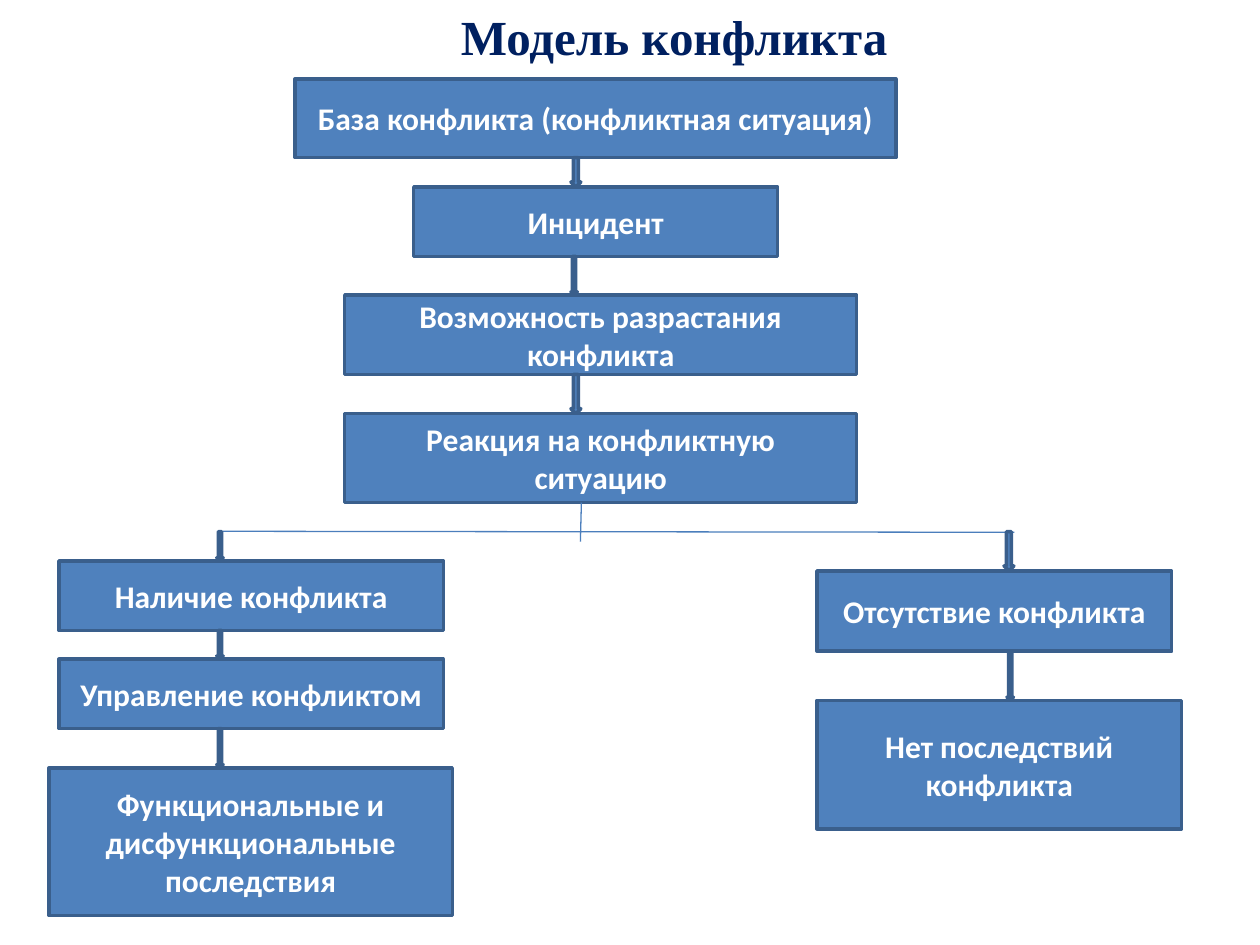
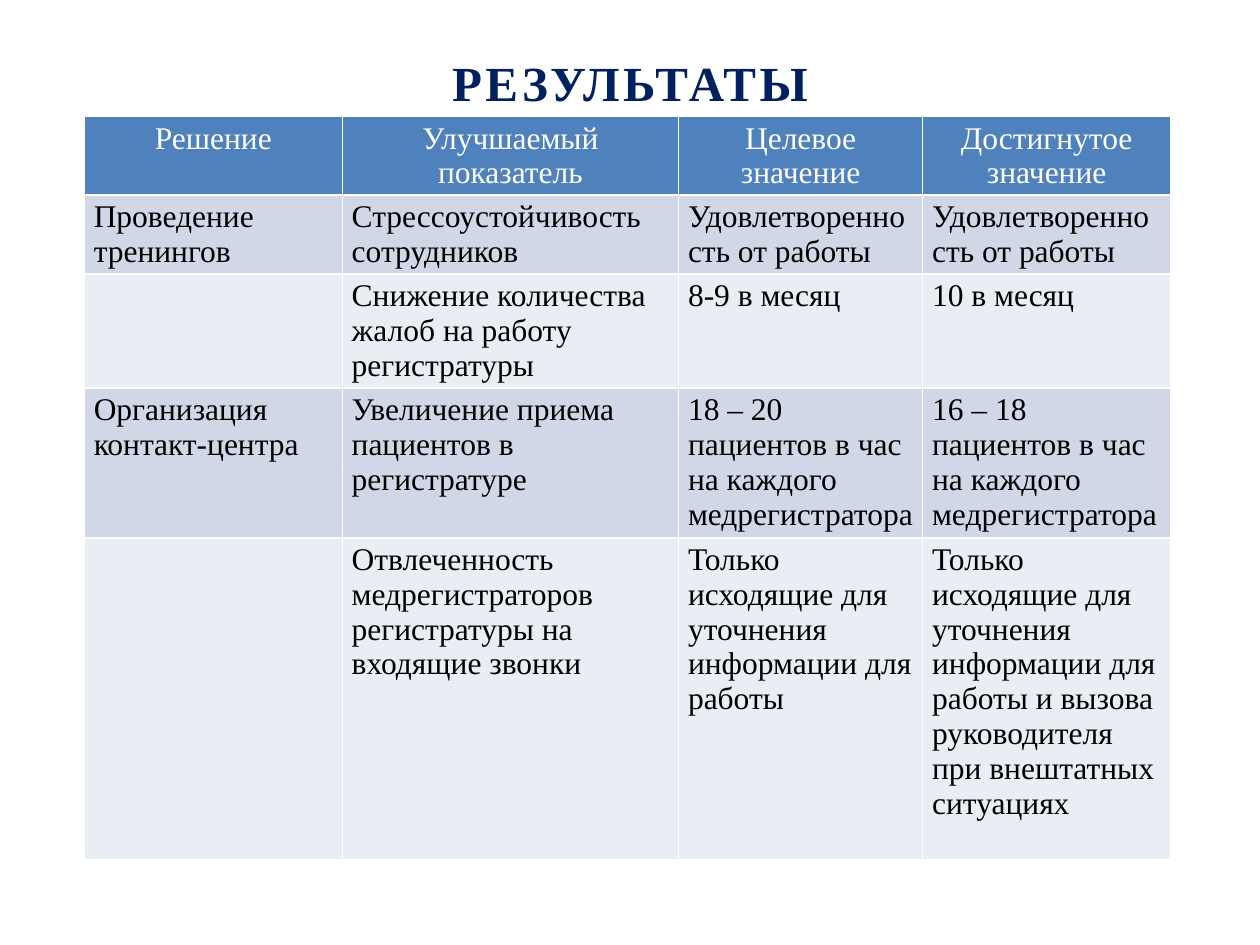
from itertools import pairwise

from lxml.etree import SubElement
from pptx import Presentation
from pptx.dml.color import RGBColor
from pptx.enum.shapes import MSO_CONNECTOR, MSO_SHAPE
from pptx.enum.text import MSO_ANCHOR, PP_ALIGN
from pptx.oxml.ns import qn
from pptx.util import Cm, Pt

NAVY = RGBColor(0x00, 0x20, 0x60)
BLUE = RGBColor(0x4F, 0x81, 0xBD)
OUTLINE = RGBColor(0x3A, 0x5F, 0x8C)
BRANCH = RGBColor(0x4B, 0x7E, 0xBC)
WHITE = RGBColor(0xFF, 0xFF, 0xFF)
BLACK = RGBColor(0x00, 0x00, 0x00)
BANDS = [RGBColor(0xD0, 0xD8, 0xE8), RGBColor(0xE9, 0xED, 0xF4)]

TITLE_FONT = {"name": "Times New Roman", "size": Pt(28), "bold": True}
STEP_FONT = {"name": "Calibri", "size": Pt(18), "bold": True}
CELL_FONT = {"name": "Times New Roman", "size": Pt(18), "bold": False}
CELL_LINE = Pt(19.9)
CELL_MARGINS = {
    "margin_left": Cm(0.19),
    "margin_right": Cm(0.19),
    "margin_top": Cm(0.09),
    "margin_bottom": Cm(0.09),
}

MODEL_TITLE = ("Модель конфликта", (2.16, 0, 22.86, 1.46), 0)
RESULTS_TITLE = ("РЕЗУЛЬТАТЫ", (1.27, 0.78, 22.86, 1.75), 200)

COURSE = [
    ("База конфликта (конфликтная ситуация)", (5.95, 1.59, 12.11, 1.59)),
    ("Инцидент", (8.34, 3.77, 7.34, 1.4)),
    ("Возможность разрастания конфликта", (6.95, 5.95, 10.32, 1.6)),
    ("Реакция на конфликтную ситуацию", (6.95, 8.34, 10.32, 1.79)),
]
CONFLICT = [
    ("Наличие конфликта", (1.19, 11.31, 7.75, 1.4)),
    ("Управление конфликтом", (1.19, 13.29, 7.75, 1.4)),
    ("Функциональные и дисфункциональные последствия", (0.99, 15.48, 8.13, 2.98)),
]
NO_CONFLICT = [
    ("Отсутствие конфликта", (16.47, 11.51, 7.15, 1.62)),
    ("Нет последствий конфликта", (16.47, 14.12, 7.35, 2.59)),
]
THIN, THICK = 0.13, 0.2
FORK_TOP = 10.72
COURSE_ARROWS = [(11.51, THICK), (11.51, THIN), (11.51, THICK)]
CONFLICT_ARROWS = [(4.37, THIN)] * 3
NO_CONFLICT_ARROWS = [(20.24, THICK), (20.3, THIN)]
FORK_LINES = [
    (11.72, 10.13, 11.7, 10.92),
    (4.37, 10.71, 20.45, 10.73),
]

RESULTS = [
    ("Решение", "Улучшаемый показатель", "Целевое значение", "Достигнутое значение"),
    ("Проведение тренингов", "Стрессоустойчивость сотрудников",
     "Удовлетворенность от работы", "Удовлетворенность от работы"),
    ("", "Снижение количества жалоб на работу регистратуры",
     "8-9 в месяц", "10 в месяц"),
    ("Организация контакт-центра", "Увеличение приема пациентов в регистратуре",
     "18 – 20 пациентов в час на каждого медрегистратора",
     "16 – 18 пациентов в час на каждого медрегистратора"),
    ("", "Отвлеченность медрегистраторов регистратуры на входящие звонки",
     "Только исходящие для уточнения информации для работы",
     "Только исходящие для уточнения информации для работы и вызова "
     "руководителя при внештатных ситуациях"),
]
RESULTS_AT = (1.7, 2.35)
COLUMN_WIDTHS = [5.2, 6.78, 4.92, 5.0]
ROW_HEIGHTS = [1.57, 1.59, 2.3, 3.02, 6.49]


def set_values(target, values):
    for attribute, value in values.items():
        setattr(target, attribute, value)


def write(frame, text, font, color, align):
    paragraph = frame.paragraphs[0]
    paragraph.alignment = align
    if text:
        paragraph.add_run().text = text
    for part in (paragraph, *paragraph.runs):
        set_values(part.font, font)
        part.font.color.rgb = color
    return paragraph


def add_title(slide, text, place, spacing):
    frame = slide.shapes.add_textbox(*map(Cm, place)).text_frame
    set_values(frame, {"word_wrap": True, "vertical_anchor": MSO_ANCHOR.MIDDLE})
    paragraph = write(frame, text, TITLE_FONT, NAVY, PP_ALIGN.CENTER)
    if spacing:
        paragraph.runs[0].font._element.set("spc", str(spacing))


def add_block(slide, preset, place):
    block = slide.shapes.add_shape(preset, *map(Cm, place))
    block.shadow.inherit = False
    block.fill.solid()
    block.fill.fore_color.rgb = BLUE
    block.line.color.rgb = OUTLINE
    block.line.width = Pt(2)
    return block


def add_chain(slide, steps, arrows, start=None):
    for text, place in steps:
        frame = add_block(slide, MSO_SHAPE.RECTANGLE, place).text_frame
        set_values(frame, {"word_wrap": True, "vertical_anchor": MSO_ANCHOR.MIDDLE})
        write(frame, text, STEP_FONT, WHITE, PP_ALIGN.CENTER)
    places = [place for _, place in steps]
    gaps = [(upper[1] + upper[3], lower[1]) for upper, lower in pairwise(places)]
    if start is not None:
        gaps.insert(0, (start, places[0][1]))
    for (left, width), (top, bottom) in zip(arrows, gaps):
        add_block(slide, MSO_SHAPE.DOWN_ARROW, (left, top, width, bottom - top))


def add_fork(slide):
    for ends in FORK_LINES:
        branch = slide.shapes.add_connector(MSO_CONNECTOR.STRAIGHT, *map(Cm, ends))
        branch.line.color.rgb = BRANCH
        branch.line.width = Pt(0.75)
        SubElement(branch._element.spPr, qn("a:effectLst"))


def add_borders(cell):
    properties = cell._tc.get_or_add_tcPr()
    for side in "LRTB":
        border = SubElement(properties, qn(f"a:ln{side}"), w=str(Pt(1)))
        fill = SubElement(border, qn("a:solidFill"))
        SubElement(fill, qn("a:srgbClr"), val=str(WHITE))


def fill_cell(cell, text, header, band):
    set_values(cell, CELL_MARGINS)
    add_borders(cell)
    cell.fill.solid()
    cell.fill.fore_color.rgb = band
    color = WHITE if header else BLACK
    align = PP_ALIGN.CENTER if header else PP_ALIGN.LEFT
    paragraph = write(cell.text_frame, text, CELL_FONT, color, align)
    paragraph.line_spacing = CELL_LINE
    ending = SubElement(paragraph._p, qn("a:endParaRPr"), sz="1800")
    SubElement(ending, qn("a:latin"), typeface=CELL_FONT["name"])


def add_results(slide):
    size = (sum(COLUMN_WIDTHS), sum(ROW_HEIGHTS))
    table = slide.shapes.add_table(
        len(RESULTS), len(COLUMN_WIDTHS), *map(Cm, RESULTS_AT + size)
    ).table
    for column, width in zip(table.columns, COLUMN_WIDTHS):
        column.width = Cm(width)
    for index, (row, height, texts) in enumerate(zip(table.rows, ROW_HEIGHTS, RESULTS)):
        row.height = Cm(height)
        header = index == 0
        band = BLUE if header else BANDS[(index - 1) % 2]
        for cell, text in zip(row.cells, texts):
            fill_cell(cell, text, header, band)


def main():
    deck = Presentation()
    set_values(deck, {"slide_width": Cm(25.4), "slide_height": Cm(19.05)})
    blank = deck.slide_layouts[6]

    model = deck.slides.add_slide(blank)
    add_title(model, *MODEL_TITLE)
    add_chain(model, COURSE, COURSE_ARROWS)
    add_fork(model)
    add_chain(model, CONFLICT, CONFLICT_ARROWS, FORK_TOP)
    add_chain(model, NO_CONFLICT, NO_CONFLICT_ARROWS, FORK_TOP)

    results = deck.slides.add_slide(blank)
    add_title(results, *RESULTS_TITLE)
    add_results(results)

    deck.save("out.pptx")


if __name__ == "__main__":
    main()
